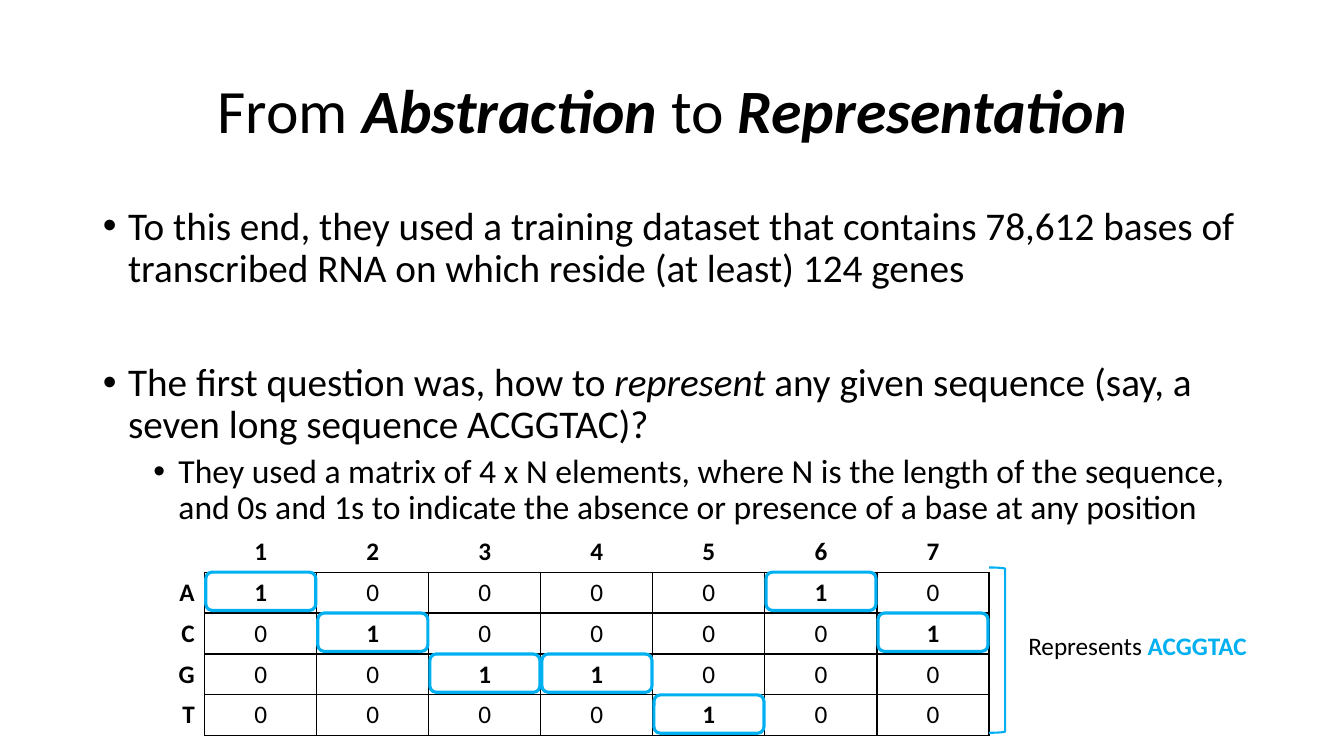
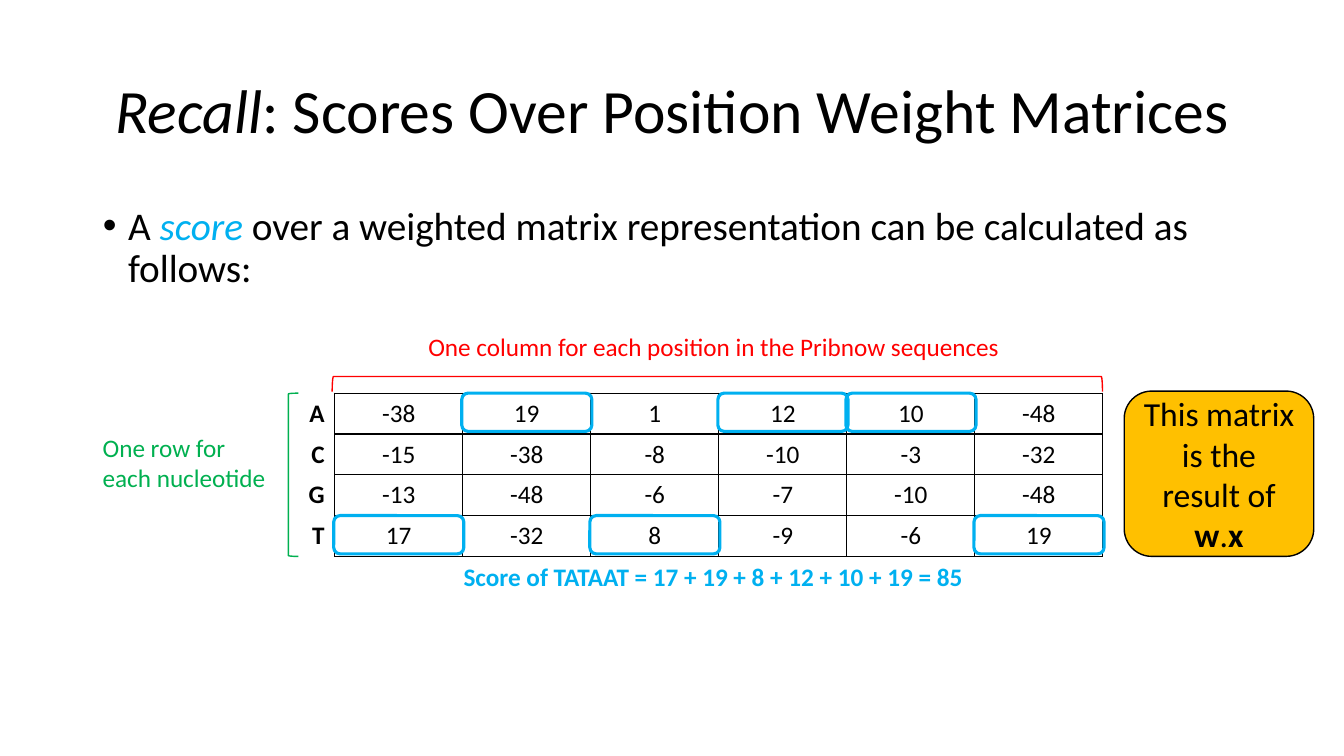
from dataclasses import dataclass

import pptx
import pptx.dml.color
import pptx.enum.shapes
import pptx.enum.text
import pptx.oxml
import pptx.oxml.ns
import pptx.util
from pptx.util import Inches, Pt

SHAPE = pptx.enum.shapes.MSO_SHAPE
ALIGN = pptx.enum.text.PP_ALIGN
ANCHOR = pptx.enum.text.MSO_ANCHOR


@dataclass(frozen=True)
class Theme:
    font: str = "Calibri"
    ink: str = "000000"
    accent: str = "00B0F0"
    columns: str = "FF0000"
    rows: str = "00B050"
    callout: str = "FFC000"
    title: int = 44
    body: tuple = (28, 24)
    callout_size: int = 24
    label: int = 18
    thin: float = 1
    bracket: float = 1.5
    highlight: float = 2.25


THEME = Theme()
NO_STYLE_TABLE = "{2D5ABB26-0587-4C30-8999-92F81FD0307C}"
BASES = "ACGT"

# A text is a list of spans: plain strings, or (words, style letters[, colour]).
TITLE_BOX = (0.92, 0.4, 11.5, 1.45)
BODY_BOX = (0.92, 2, 11.8, 4.76)

ENCODING_TITLE = ["From ", ("Abstraction", "bi"), " to ", ("Representation", "bi")]
# Each bullet: level, space before in points, spans.
ENCODING_BULLETS = [
    (0, 10, ["To this end, they used a training dataset that contains 78,612 bases of "
             "transcribed RNA on which reside (at least) 124 genes"]),
    (0, 51, ["The first question was, how to ", ("represent", "i"),
             " any given sequence (say, a seven long sequence ACGGTAC)?"]),
    (1, 5, ["They used a matrix of 4 x N elements, where N is the length of the sequence, "
            "and 0s and 1s to indicate the absence or presence of a base at any position"]),
]
ENCODED = "ACGGTAC"

SCORE_TITLE = [("Recall", "i"), ": Scores Over Position Weight Matrices"]
SCORE_BULLETS = [
    (0, 10, ["A ", ("score", "i", THEME.accent),
             " over a weighted matrix representation can be calculated as follows:"]),
]
SCORED = "TATAAT"
WEIGHTS = [
    [-38, 19, 1, 12, 10, -48],
    [-15, -38, -8, -10, -3, -32],
    [-13, -48, -6, -7, -10, -48],
    [17, -32, 8, -9, -6, 19],
]
CALLOUT = ["This matrix is the result of ", ("w", "b"), ".", ("x", "b")]


def rgb(colour):
    return pptx.dml.color.RGBColor.from_string(colour)


def write(para, spans, size, colour=THEME.ink, align=ALIGN.LEFT, bold=False):
    para.alignment = align
    font = para.font
    font.name, font.size, font.bold = THEME.font, Pt(size), bold
    font.color.rgb = rgb(colour)
    for item in spans:
        words, style, tint = (item, "", None) if isinstance(item, str) else (*item, None)[:3]
        span = para.add_run()
        span.text = words
        if "b" in style:
            span.font.bold = True
        if "i" in style:
            span.font.italic = True
        if tint:
            span.font.color.rgb = rgb(tint)


def add_bullet(para, level, before, spans):
    write(para, spans, THEME.body[level])
    para.level = level
    para.space_before, para.line_spacing = Pt(before), 0.9
    props = para._p.get_or_add_pPr()
    props.set("marL", str(Inches(0.25 + 0.5 * level)))
    props.set("indent", str(Inches(-0.25)))
    bullet = pptx.oxml.parse_xml(
        f'<a:buChar {pptx.oxml.ns.nsdecls("a")} char="•"/>')
    props.insert_element_before(bullet, "a:tabLst", "a:defRPr", "a:extLst")


def add_page(deck, title, bullets):
    page = deck.slides.add_slide(deck.slide_layouts[1])
    heading, body = page.placeholders
    for holder in (heading, body):
        holder.text_frame.auto_size = pptx.enum.text.MSO_AUTO_SIZE.NONE
    para = heading.text_frame.paragraphs[0]
    write(para, title, THEME.title, align=ALIGN.CENTER)
    para.line_spacing = 0.9
    for index, bullet in enumerate(bullets):
        frame = body.text_frame
        add_bullet(frame.add_paragraph() if index else frame.paragraphs[0], *bullet)
    return page


def add_label(page, at, lines, colour=THEME.ink, bold=False):
    frame = page.shapes.add_textbox(*map(Inches, at)).text_frame
    frame.word_wrap = False
    for index, spans in enumerate(lines):
        para = frame.add_paragraph() if index else frame.paragraphs[0]
        write(para, spans, THEME.label, colour, bold=bold)


def add_outline(page, kind, at, colour, width, fill=None):
    box = page.shapes.add_shape(kind, *map(Inches, at))
    box.shadow.inherit = False
    box.line.color.rgb, box.line.width = rgb(colour), Pt(width)
    if fill:
        box.fill.solid()
        box.fill.fore_color.rgb = rgb(fill)
    else:
        box.fill.background()
    return box


def set_borders(cell, sides):
    props = cell._tc.get_or_add_tcPr()
    for index, side in enumerate(sides):
        props.insert(index, pptx.oxml.parse_xml(
            f'<a:ln{side} {pptx.oxml.ns.nsdecls("a")} w="{Pt(THEME.thin)}">'
            f'<a:solidFill><a:srgbClr val="{THEME.ink}"/></a:solidFill></a:ln{side}>'))


def add_matrix(page, at, values, sequence, overhang, header=False, bold_hits=False):
    """Draw a base-by-position table and ring the cell each base of the sequence picks."""
    left, top, width, height = at
    first = int(header)
    row_count, column_count = len(BASES) + first, len(sequence) + 1
    column_width, row_height = width / column_count, height / row_count
    table = page.shapes.add_table(row_count, column_count, *map(Inches, at)).table
    table.first_row = table.horz_banding = False
    table._tbl.tblPr.find(pptx.oxml.ns.qn("a:tableStyleId")).text = NO_STYLE_TABLE
    for column in table.columns:
        column.width = Inches(column_width)

    grid = [[base, *line] for base, line in zip(BASES, values)]
    if header:
        grid.insert(0, ["", *range(1, column_count)])
    for row, line in enumerate(grid):
        table.rows[row].height = Inches(row_height)
        for column, value in enumerate(line):
            cell = table.cell(row, column)
            cell.fill.background()
            is_header, is_base = row < first, column == 0
            hit = not (is_header or is_base) and sequence[column - 1] == grid[row][0]
            write(cell.text_frame.paragraphs[0], [str(value)], THEME.label,
                  align=ALIGN.RIGHT if is_base else ALIGN.CENTER,
                  bold=is_header or is_base or (hit and bold_hits))
            if is_header:
                set_borders(cell, "" if is_base else "B")
            else:
                set_borders(cell, "R" if is_base else "LRTB")

    for position, base in enumerate(sequence, 1):
        row = BASES.index(base) + first
        ring = (left + position * column_width - overhang, top + row * row_height,
                column_width + 2 * overhang, 0.38)
        add_outline(page, SHAPE.ROUNDED_RECTANGLE, ring, THEME.accent, THEME.highlight)


def build_encoding(deck):
    page = add_page(deck, ENCODING_TITLE, ENCODING_BULLETS)
    one_hot = [[int(base == letter) for letter in ENCODED] for base in BASES]
    add_matrix(page, (0.92, 5.27, 8.89, 2.03), one_hot, ENCODED, -0.01,
               header=True, bold_hits=True)
    add_label(page, (10.1, 6.2, 2.38, 0.4),
              [["Represents ", (ENCODED, "b", THEME.accent)]])
    add_outline(page, SHAPE.RIGHT_BRACKET, (9.81, 5.63, 0.16, 1.64),
                THEME.accent, THEME.bracket)


def build_scores(deck):
    page = add_page(deck, SCORE_TITLE, SCORE_BULLETS)
    add_matrix(page, (2.05, 3.9, 8.89, 1.62), WEIGHTS, SCORED, 0.01)

    add_label(page, (4.15, 3.24, 5.94, 0.4),
              [["One column for each position in the Pribnow sequences"]], THEME.columns)
    over_columns = add_outline(page, SHAPE.RIGHT_BRACKET, (7.04, -0.01, 0.15, 7.64),
                               THEME.columns, THEME.thin)
    over_columns.rotation = 270

    add_label(page, (0.92, 4.24, 1.9, 0.71),
              [["One row for"], ["each nucleotide"]], THEME.rows)
    add_outline(page, SHAPE.LEFT_BRACKET, (2.86, 3.9, 0.1, 1.62), THEME.rows, THEME.thin)

    picked = [WEIGHTS[BASES.index(base)][i] for i, base in enumerate(SCORED)]
    total = f"Score of {SCORED} = {' + '.join(map(str, picked))} = {sum(picked)}"
    add_label(page, (4.5, 5.52, 5.23, 0.4), [[total]], THEME.accent, bold=True)

    callout = add_outline(page, SHAPE.ROUNDED_RECTANGLE, (11.15, 3.88, 1.88, 1.64),
                          THEME.ink, THEME.thin, THEME.callout)
    frame = callout.text_frame
    frame.word_wrap, frame.vertical_anchor = True, ANCHOR.MIDDLE
    write(frame.paragraphs[0], CALLOUT, THEME.callout_size, align=ALIGN.CENTER)


def main():
    deck = pptx.Presentation()
    deck.slide_width, deck.slide_height = Inches(13.33), Inches(7.5)
    title, body = list(deck.slide_layouts[1].placeholders)[:2]
    for holder, at in ((title, TITLE_BOX), (body, BODY_BOX)):
        holder.left, holder.top, holder.width, holder.height = map(Inches, at)
    build_encoding(deck)
    build_scores(deck)
    deck.save("out.pptx")


if __name__ == "__main__":
    main()
